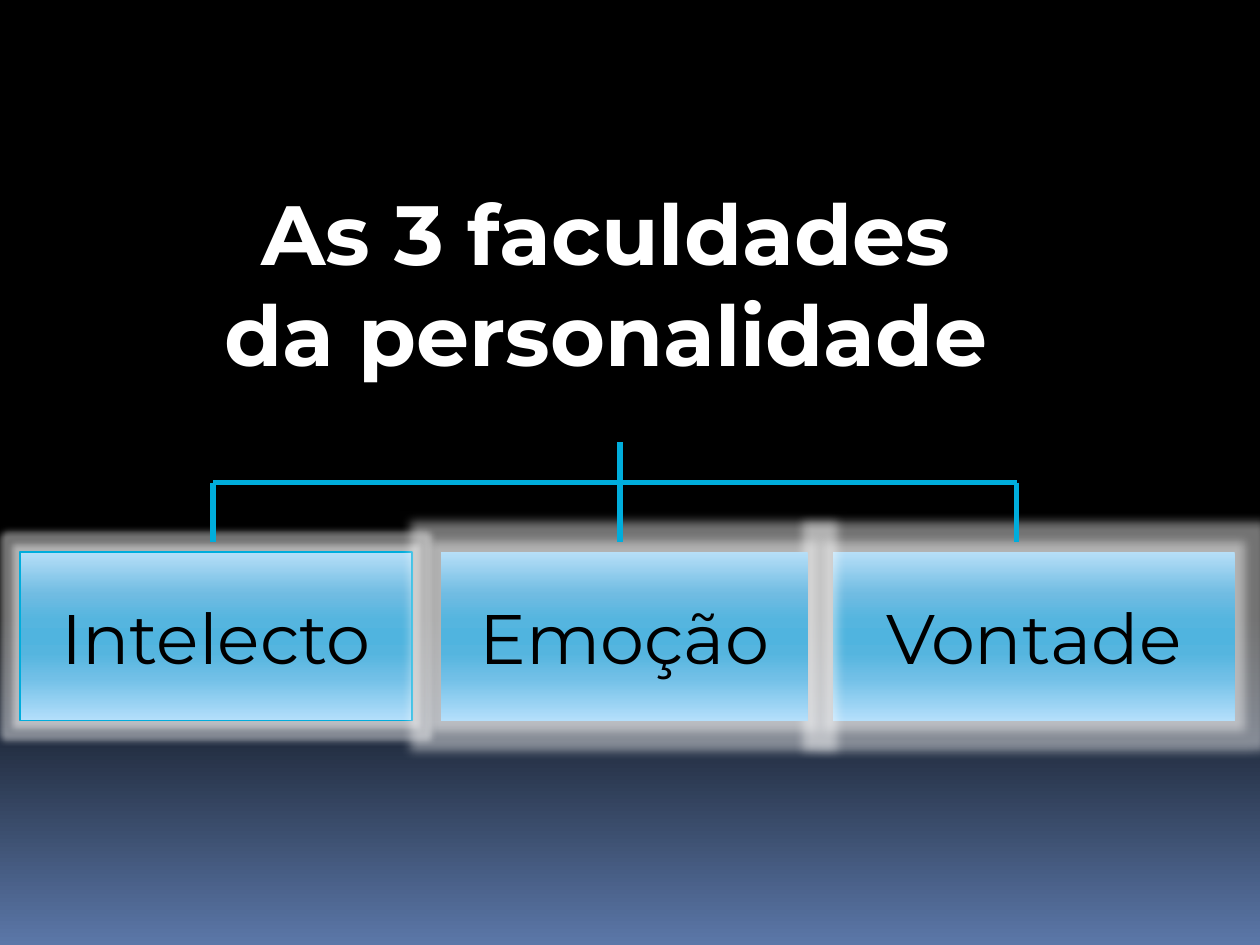
from lxml import etree
from pptx import Presentation
from pptx.dml.color import RGBColor
from pptx.enum.shapes import MSO_CONNECTOR as Conn, MSO_SHAPE as Shape
from pptx.enum.text import MSO_ANCHOR as Anchor, MSO_AUTO_SIZE as Fit, PP_ALIGN as Align
from pptx.oxml.ns import qn
from pptx.util import Inches, Pt

FONT = "Montserrat"
CYAN = "00ADDC"
NIGHT = [(0, "000000"), (65, "000000"), (100, "5B77A8")]
GLASS = [(0, "B7DFF8"), (25, "70BCE2"), (40, "55B5DF"), (50, "50B4DF"),
         (60, "55B5DF"), (75, "72C0E7"), (100, "B4DFFB")]


def color(code):
    return RGBColor.from_string(code)


def shade(fill, node, stops):
    """Fill from top to bottom with the given colour stops."""
    fill.gradient()
    fill.gradient_angle = 270
    ramp = node.find(".//" + qn("a:gsLst"))
    for old in list(ramp):
        ramp.remove(old)
    for place, code in stops:
        stop = etree.SubElement(ramp, qn("a:gs"), pos=str(place * 1000))
        etree.SubElement(stop, qn("a:srgbClr"), val=code)


def add_glow(shape, size):
    """Put a soft, half clear white glow around a shape."""
    props = shape._element.spPr
    for old in props.findall(qn("a:effectLst")):
        props.remove(old)
    list_ = etree.SubElement(props, qn("a:effectLst"))
    glow = etree.SubElement(list_, qn("a:glow"), rad=str(Inches(size)))
    tint = etree.SubElement(glow, qn("a:srgbClr"), val="FFFFFF")
    etree.SubElement(tint, qn("a:alpha"), val="45000")


def write(para, text, size, code, bold=False):
    para.text = text
    para.alignment = Align.CENTER
    font = para.font
    font.name, font.size, font.bold = FONT, Pt(size), bold
    font.color.rgb = color(code)


def add_title(slide, left, top, width, height):
    box = slide.shapes.add_textbox(Inches(left), Inches(top), Inches(width), Inches(height))
    frame = box.text_frame
    frame.word_wrap = False
    frame.auto_size = Fit.SHAPE_TO_FIT_TEXT
    write(frame.paragraphs[0], "As 3 faculdades", 48, "FFFFFF", True)
    write(frame.add_paragraph(), "da personalidade", 48, "FFFFFF", True)


def add_line(slide, x1, y1, x2, y2):
    line = slide.shapes.add_connector(Conn.STRAIGHT, Inches(x1), Inches(y1),
                                      Inches(x2), Inches(y2))
    line.line.color.rgb = color(CYAN)
    line.line.width = Pt(3)
    etree.SubElement(line._element.spPr, qn("a:effectLst"))


def add_tree(slide, left, top, width, height):
    """Trunk, two side drops and the bar that joins them."""
    right, base, bar = left + width, top + height, top + 0.32
    trunk = left + 3.23
    add_line(slide, trunk, top, trunk, base)
    for x in (left, right):
        add_line(slide, x, bar, x, base)
    add_line(slide, right, bar, left, bar)


def add_card(slide, text, left, top, width, height, glow, edge=None):
    card = slide.shapes.add_shape(Shape.RECTANGLE, Inches(left), Inches(top),
                                  Inches(width), Inches(height))
    shade(card.fill, card._element.spPr, GLASS)
    if edge:
        card.line.color.rgb = color(edge)
        card.line.width = Pt(0.94)
    else:
        card.line.fill.background()
    add_glow(card, glow)
    frame = card.text_frame
    frame.word_wrap = True
    frame.vertical_anchor = Anchor.MIDDLE
    write(frame.paragraphs[0], text, 40, "000000")


def add_cards(slide, top, height):
    cards = [("Intelecto", 0.16, 3.11, 0.1, CYAN),
             ("Vontade", 6.61, 3.19, 0.16, None),
             ("Emoção", 3.5, 2.91, 0.16, None)]
    for text, left, width, glow, edge in cards:
        add_card(slide, text, left, top, width, height, glow, edge)


def main():
    deck = Presentation()
    deck.slide_width, deck.slide_height = Inches(10), Inches(7.5)
    slide = deck.slides.add_slide(deck.slide_layouts[6])
    # Background
    shade(slide.background.fill, slide.element, NIGHT)
    # Faculties, heading and branches
    add_cards(slide, 4.38, 1.34)
    add_title(slide, 1.54, 1.39, 6.54, 1.72)
    add_tree(slide, 1.69, 3.51, 6.38, 0.79)
    deck.save("out.pptx")


if __name__ == "__main__":
    main()
